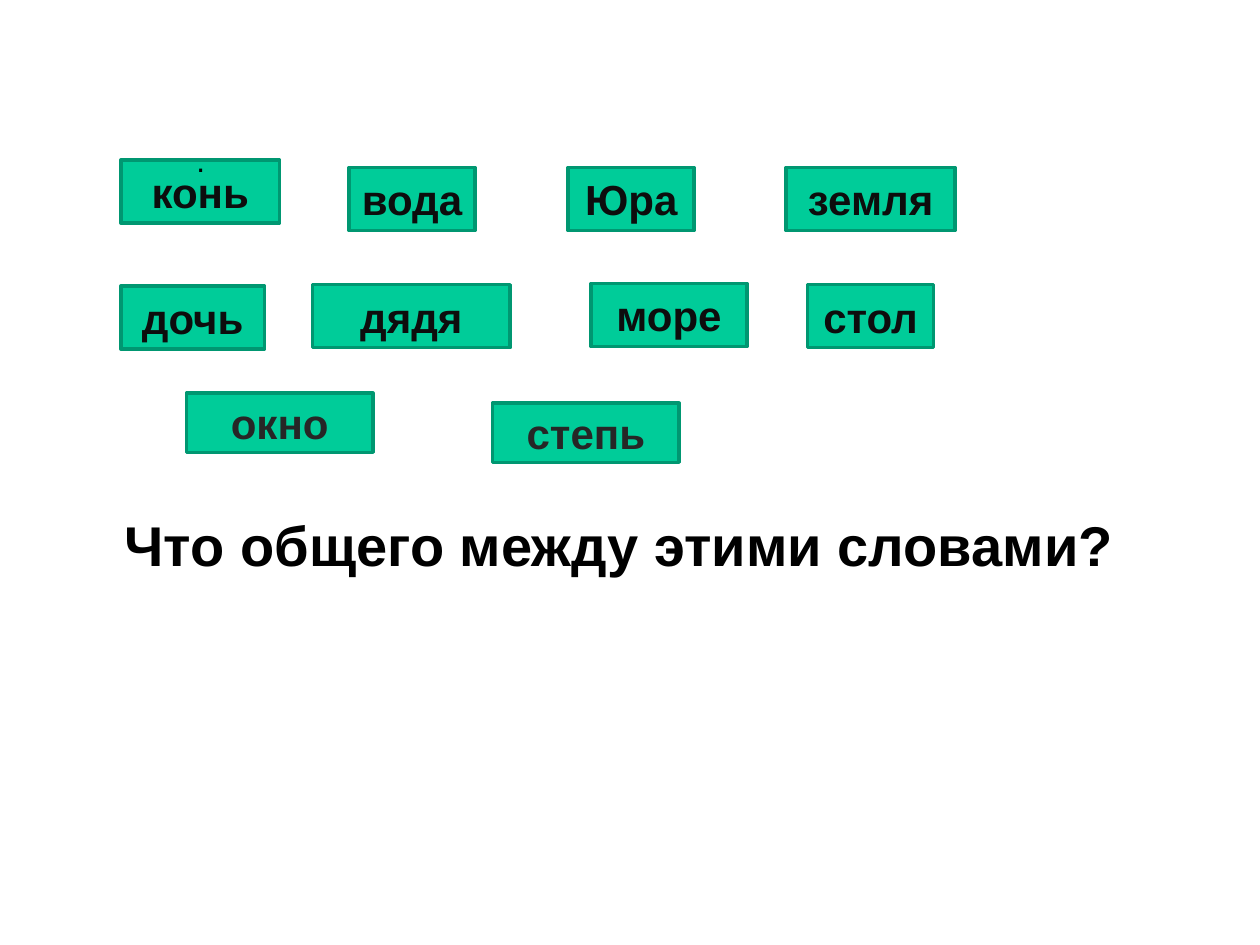
"""Build a slide of word cards with a question about what the words share."""
from pptx import Presentation
from pptx.dml.color import RGBColor
from pptx.enum.shapes import MSO_SHAPE
from pptx.enum.text import MSO_ANCHOR, MSO_AUTO_SIZE, PP_ALIGN
from pptx.util import Inches, Pt

RECTANGLE = MSO_SHAPE.RECTANGLE
PROCESS = MSO_SHAPE.FLOWCHART_PROCESS
MIDDLE = MSO_ANCHOR.MIDDLE
TOP = MSO_ANCHOR.TOP
CENTER = PP_ALIGN.CENTER
LEFT = PP_ALIGN.LEFT
GROW = MSO_AUTO_SIZE.SHAPE_TO_FIT_TEXT

CARD_FILL = "00CC99"
CARD_LINE = "009771"
DARK = "0D0D0D"
GREY = "262626"
BLACK = "000000"


def color(value):
    return RGBColor.from_string(value)


def write(box, text, size=24, ink=DARK, bold=True, align=CENTER, anchor=MIDDLE, wrap=True):
    frame = box.text_frame
    frame.word_wrap = wrap
    frame.vertical_anchor = anchor
    para = frame.paragraphs[0]
    para.alignment = align
    span = para.add_run()
    span.text = text
    span.font.name = "Arial"
    span.font.size = Pt(size)
    span.font.bold = bold
    span.font.color.rgb = color(ink)


deck = Presentation()
deck.slide_width = Inches(10)
deck.slide_height = Inches(7.5)
page = deck.slides.add_slide(deck.slide_layouts[6])

cards = [
    ("конь", 0.96, 1.27, 1.26, 0.5, DARK, RECTANGLE),
    ("вода", 2.77, 1.33, 1, 0.5, DARK, RECTANGLE),
    ("Юра", 4.51, 1.33, 1, 0.5, DARK, PROCESS),
    ("земля", 6.24, 1.33, 1.34, 0.5, DARK, RECTANGLE),
    ("дочь", 0.96, 2.27, 1.14, 0.5, DARK, RECTANGLE),
    ("дядя", 2.48, 2.26, 1.57, 0.5, DARK, RECTANGLE),
    ("море", 4.69, 2.25, 1.24, 0.5, DARK, RECTANGLE),
    ("стол", 6.41, 2.26, 1, 0.5, DARK, RECTANGLE),
    ("окно", 1.48, 3.12, 1.48, 0.47, GREY, RECTANGLE),
    ("степь", 3.91, 3.2, 1.48, 0.47, GREY, RECTANGLE),
]
for word, left, top, width, height, ink, outline in cards:
    card = page.shapes.add_shape(outline, Inches(left), Inches(top), Inches(width), Inches(height))
    card.shadow.inherit = False
    card.fill.solid()
    card.fill.fore_color.rgb = color(CARD_FILL)
    card.line.color.rgb = color(CARD_LINE)
    card.line.width = Pt(2)
    write(card, word, ink=ink)

labels = [
    (".", 1.46, 1.07, 0.27, 0.4, 18, False),
    ("Что общего между этими словами?", 0.89, 4, 8.11, 0.64, 32, True),
]
for text, left, top, width, height, size, bold in labels:
    label = page.shapes.add_textbox(Inches(left), Inches(top), Inches(width), Inches(height))
    write(label, text, size=size, ink=BLACK, bold=bold, align=LEFT, anchor=TOP, wrap=False)
    label.text_frame.auto_size = GROW

deck.save("out.pptx")
